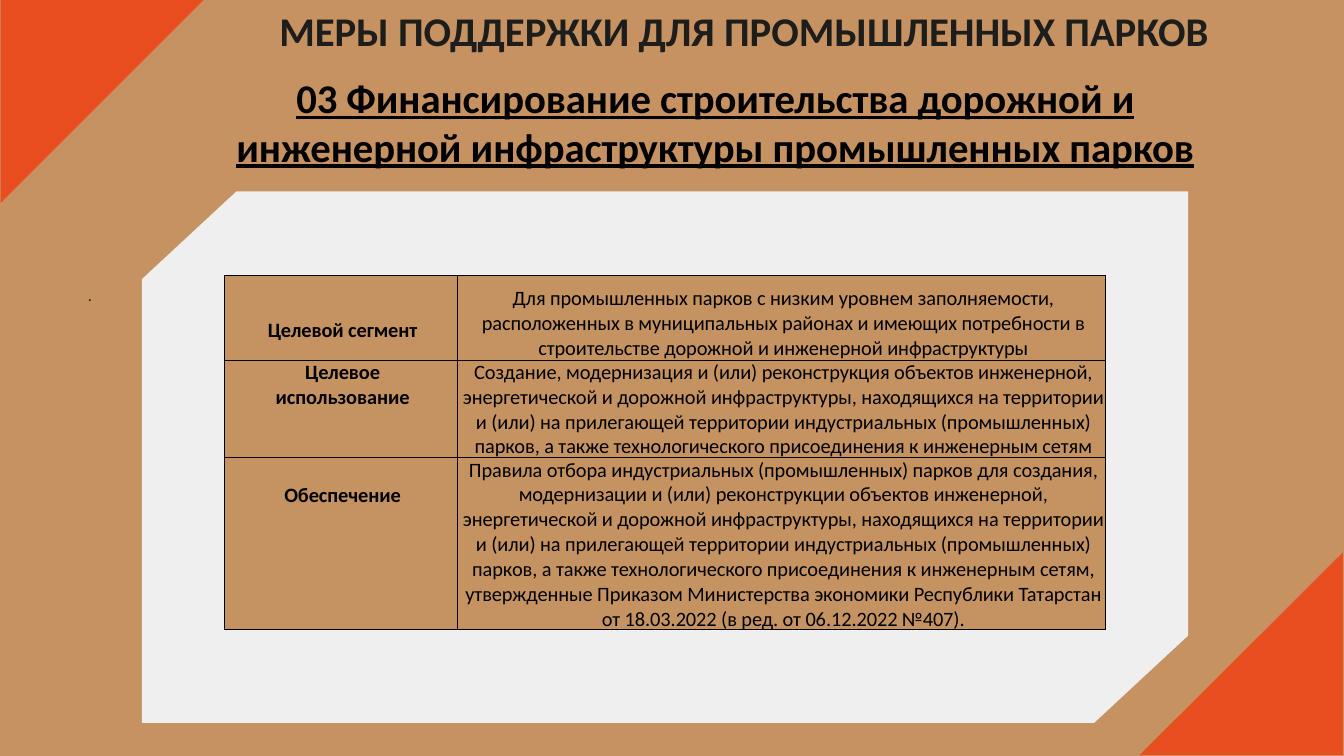
"""Build the slide on support measures for industrial parks."""
from pptx import Presentation
from pptx.dml.color import RGBColor as RGB
from pptx.enum.text import MSO_AUTO_SIZE as Auto, PP_ALIGN as Align
from pptx.oxml import parse_xml
from pptx.oxml.ns import nsdecls
from pptx.util import Pt

PX = 9144
THEME = {
    "font": "Calibri",
    "back": "C69262", "cell": "C59261", "accent": "E84E20", "panel": "EFEFEF",
    "black": "000000", "ink": "1D1D1B",
    "head": 48, "body": 24, "dot": 19.5,
}


def style(para, size, color, bold=False, line=False, space=0, indent=1, track=0):
    para.space_before = Pt(space)
    para._p.get_or_add_pPr().set("marL", str(indent * PX))
    for run in para.runs:
        font = run.font
        font.name, font.size = THEME["font"], Pt(THEME[size])
        font.bold, font.underline = bold, line
        font.color.rgb = RGB.from_string(THEME[color])
        if track:
            font._element.set("spc", str(track))


def label(text, left, top, width, height, align=Align.LEFT, **look):
    box = slide.shapes.add_textbox(left * PX, top * PX, width * PX, height * PX)
    frame = box.text_frame
    frame.word_wrap, frame.auto_size = True, Auto.SHAPE_TO_FIT_TEXT
    frame.margin_left = frame.margin_right = frame.margin_bottom = 0
    frame.margin_top = PX
    frame.text = text
    para = frame.paragraphs[0]
    para.alignment = align
    style(para, **look)


prs = Presentation()
prs.slide_width, prs.slide_height = 2199 * PX, 1237 * PX
slide = prs.slides.add_slide(prs.slide_layouts[6])
fill = slide.background.fill
fill.solid()
fill.fore_color.rgb = RGB.from_string(THEME["back"])

outlines = [
    ("accent", [(333, 0), (1, 0), (1, 332)]),
    ("accent", [(2197, 904), (1865, 1235), (2197, 1235)]),
    ("panel", [(1944, 313), (387, 313), (232, 457),
               (232, 1183), (1790, 1183), (1944, 1040)]),
]
for color, points in outlines:
    form = slide.shapes.build_freeform(*points[0], scale=PX)
    form.add_line_segments(points[1:], close=True)
    shape = form.convert_to_shape()
    shape.shadow.inherit = False
    shape.fill.solid()
    shape.fill.fore_color.rgb = RGB.from_string(THEME[color])
    shape.line.fill.background()

label("03 Финансирование строительства дорожной и инженерной инфраструктуры "
      "промышленных парков", 366, 118, 1608, 163, Align.CENTER,
      size="head", color="black", bold=True, line=True, space=1, track=-10)
label(".", 143, 465, 10, 35, size="dot", color="ink", space=0.9, track=-10)
label("МЕРЫ ПОДДЕРЖКИ ДЛЯ ПРОМЫШЛЕННЫХ ПАРКОВ", 456, 8, 1631, 82,
      size="head", color="ink", bold=True, space=0.9)

rows = [
    (93, "Целевой сегмент", 70,
     "Для промышленных парков с низким уровнем заполняемости, расположенных в "
     "муниципальных районах и имеющих потребности в строительстве дорожной и "
     "инженерной инфраструктуры", 18),
    (131, "Целевое\nиспользование", 0,
     "Создание, модернизация и (или) реконструкция объектов инженерной, "
     "энергетической и дорожной инфраструктуры, находящихся на территории и (или) "
     "на прилегающей территории индустриальных (промышленных) парков, а также "
     "технологического присоединения к инженерным сетям", 0),
    (193, "Обеспечение", 41,
     "Правила отбора индустриальных (промышленных) парков для создания, "
     "модернизации и (или) реконструкции объектов инженерной, энергетической и "
     "дорожной инфраструктуры, находящихся на территории и (или) на прилегающей "
     "территории индустриальных (промышленных) парков, а также технологического "
     "присоединения к инженерным сетям, утвержденные Приказом Министерства "
     "экономики Республики Татарстан от 18.03.2022 (в ред. от 06.12.2022 №407).", 0),
]
widths = [382, 1060]
high = sum(row[0] for row in rows)
table = slide.shapes.add_table(len(rows), len(widths), 367 * PX, 451 * PX,
                               sum(widths) * PX, high * PX).table
table.first_row = table.horz_banding = False
for col, width in zip(table.columns, widths):
    col.width = width * PX
for r, (height, name, drop, text, inset) in enumerate(rows):
    table.rows[r].height = height * PX
    for c, (words, top) in enumerate([(name, drop), (text, inset)]):
        cell = table.cell(r, c)
        cell.margin_left = cell.margin_right = cell.margin_bottom = 0
        cell.margin_top = top * PX
        cell.text_frame.text = words
        for para in cell.text_frame.paragraphs:
            para.alignment = Align.CENTER
            style(para, "body", "black", bold=c == 0, indent=5, track=-10)
        props = cell._tc.get_or_add_tcPr()
        for side in ("lnL", "lnR", "lnT", "lnB"):
            props.append(parse_xml(
                f'<a:{side} {nsdecls("a")} w="{Pt(1)}"><a:solidFill>'
                f'<a:srgbClr val="{THEME["black"]}"/></a:solidFill></a:{side}>'))
        cell.fill.solid()
        cell.fill.fore_color.rgb = RGB.from_string(THEME["cell"])

prs.save("out.pptx")
